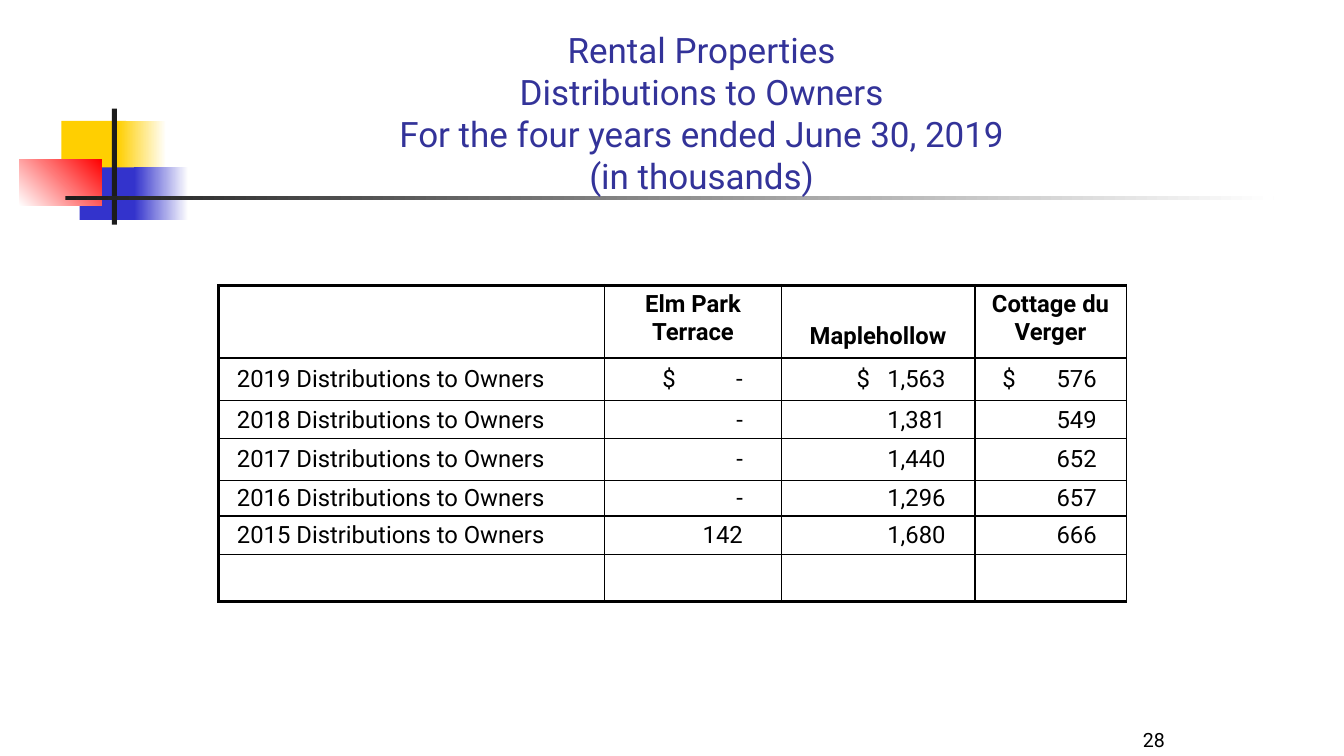
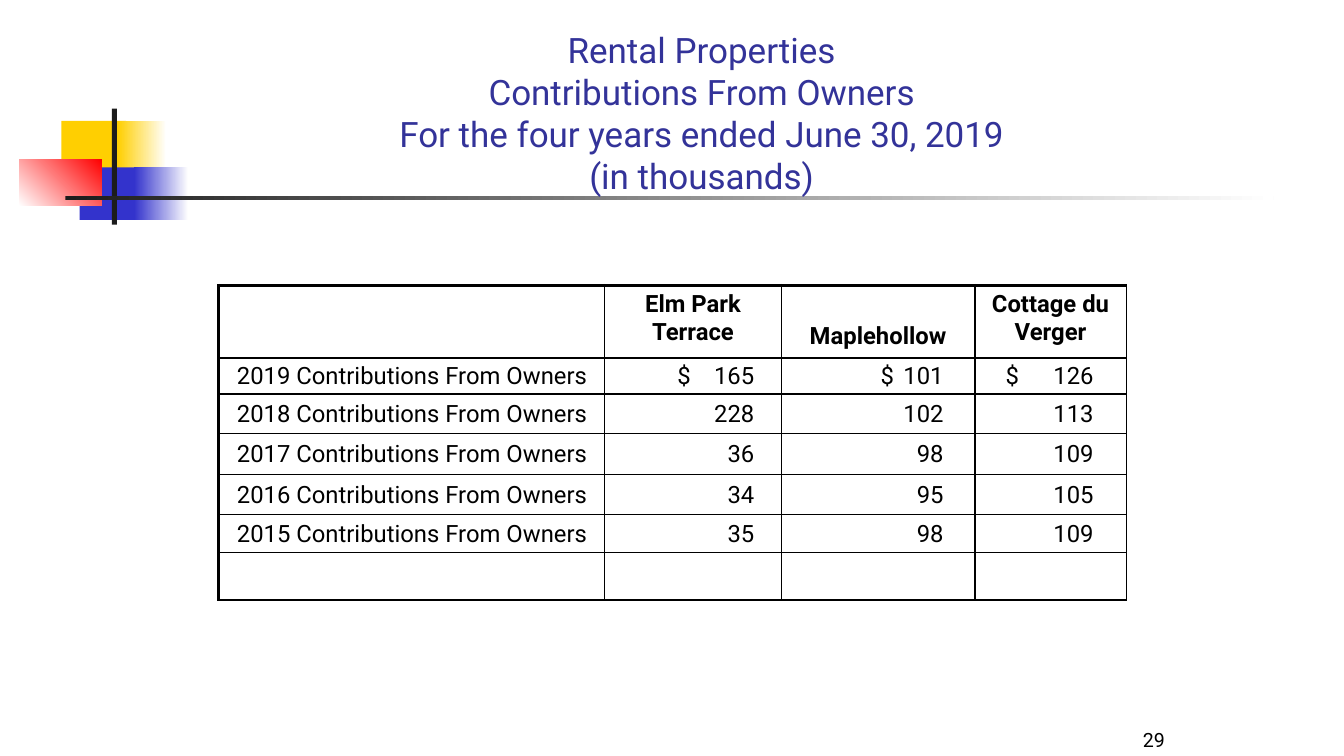
from dataclasses import dataclass

from lxml.etree import SubElement
from pptx import Presentation
from pptx.dml.color import RGBColor
from pptx.enum.shapes import MSO_SHAPE
from pptx.enum.text import MSO_ANCHOR, PP_ALIGN
from pptx.oxml.ns import qn
from pptx.util import Cm, Pt

# Shared style
FONT = "Roboto"
COLORS = {
    "yellow": "FFCF01",
    "blue": "3333CC",
    "red": "FF0000",
    "dark": "1C1C1C",
    "white": "FFFFFF",
    "title": "333399",
    "text": "000000",
}
THIN, THICK = 1, 2.25
COLUMN_WIDTHS = (9.73, 4.45, 4.88, 3.81)
HEADERS = ("", "Elm Park Terrace", "Maplehollow", "Cottage du Verger")


@dataclass(frozen=True)
class Bar:
    left: float
    top: float
    width: float
    height: float
    start: str
    end: str = ""
    angle: float = 0


@dataclass(frozen=True)
class OwnersSlide:
    subject: str
    page: int
    row_heights: tuple[float, ...]
    dollar_offsets: tuple[float, ...]  # from the left edge of each column
    number_insets: tuple[float, ...]  # from the right edge of each column
    values: dict[int, tuple[str, ...]]


BARS = (
    Bar(1.55, 3.05, 1.63, 1.32, "yellow"),
    Bar(2.97, 3.05, 1.22, 1.32, "yellow", "white"),
    Bar(2.01, 4.22, 1.55, 1.32, "blue"),
    Bar(3.38, 4.22, 1.37, 1.32, "blue", "white"),
    Bar(0.48, 4.01, 2.08, 1.17, "white", "red", 45),
    Bar(2.82, 2.74, 0.13, 2.92, "dark"),
    Bar(1.65, 4.95, 30.45, 0.09, "dark", "white"),
)

SLIDES = (
    OwnersSlide(
        "Distributions to Owners", 28,
        (1.83, 1.07, 0.95, 1.06, 0.9, 0.97, 1.18),
        (1.45, 1.9, 0.69), (0.97, 0.74, 0.74),
        {
            2019: ("-", "1,563", "576"),
            2018: ("-", "1,381", "549"),
            2017: ("-", "1,440", "652"),
            2016: ("-", "1,296", "657"),
            2015: ("142", "1,680", "666"),
        },
    ),
    OwnersSlide(
        "Contributions From Owners", 29,
        (1.83, 0.91, 1, 1.03, 1, 0.97, 1.19),
        (1.83, 2.5, 0.77), (0.68, 0.79, 0.82),
        {
            2019: ("165", "101", "126"),
            2018: ("228", "102", "113"),
            2017: ("36", "98", "109"),
            2016: ("34", "95", "105"),
            2015: ("35", "98", "109"),
        },
    ),
)


def rgb(name: str) -> RGBColor:
    return RGBColor.from_string(COLORS[name])


def style_text(tf, size: float, color: str = "text", bold: bool = False,
               align=PP_ALIGN.LEFT) -> None:
    for p in tf.paragraphs:
        p.alignment = align
        for r in p.runs:
            r.font.name = FONT
            r.font.size = Pt(size)
            r.font.bold = bold
            r.font.color.rgb = rgb(color)


def add_bar(s, bar: Bar) -> None:
    sp = s.shapes.add_shape(MSO_SHAPE.RECTANGLE, Cm(bar.left), Cm(bar.top),
                            Cm(bar.width), Cm(bar.height))
    sp.shadow.inherit = False
    sp.line.fill.background()
    if bar.end:
        sp.fill.gradient()
        sp.fill.gradient_angle = bar.angle
        for stop, name in zip(sp.fill.gradient_stops, (bar.start, bar.end)):
            stop.color.rgb = rgb(name)
    else:
        sp.fill.solid()
        sp.fill.fore_color.rgb = rgb(bar.start)


def add_text(s, box: tuple[float, ...], text: str, size: float, color: str, align) -> None:
    tf = s.shapes.add_textbox(*map(Cm, box)).text_frame
    tf.word_wrap = True
    tf.vertical_anchor = MSO_ANCHOR.BOTTOM
    tf.text = text
    style_text(tf, size, color, align=align)


def set_borders(cell, widths: dict[str, float]) -> None:
    tc_pr = cell._tc.get_or_add_tcPr()
    for side in ("L", "R", "T", "B"):
        ln = SubElement(tc_pr, qn(f"a:ln{side}"), w=str(Pt(widths.get(side, THIN))))
        fill = SubElement(ln, qn("a:solidFill"))
        SubElement(fill, qn("a:srgbClr"), val=COLORS["text"])


def fill_header(cell, text: str) -> None:
    cell.text = text
    style_text(cell.text_frame, 17, bold=True, align=PP_ALIGN.CENTER)
    # One-word names sit at the foot of the two-line header
    if " " not in text:
        cell.vertical_anchor = MSO_ANCHOR.BOTTOM
        cell.margin_bottom = Cm(0.18)


def fill_body(cell, text: str, left: float = 0.03, right: float = 0.03,
              align=PP_ALIGN.LEFT) -> None:
    cell.text = text
    cell.vertical_anchor = MSO_ANCHOR.MIDDLE
    cell.margin_left, cell.margin_right = Cm(left), Cm(right)
    cell.margin_top, cell.margin_bottom = Cm(0.03), Cm(0)
    style_text(cell.text_frame, 17, align=align)


def fill_dollars(cell, value: str, offset: float, tab: float) -> None:
    """Put the sign at the offset and end the number at a right tab."""
    fill_body(cell, f"$\t{value}", left=offset)
    p_pr = cell.text_frame.paragraphs[0]._p.get_or_add_pPr()
    tabs = SubElement(p_pr, qn("a:tabLst"))
    SubElement(tabs, qn("a:tab"), pos=str(Cm(tab)), algn="r")


def add_owners_table(s, data: OwnersSlide) -> None:
    heights = data.row_heights
    table = s.shapes.add_table(len(heights), len(COLUMN_WIDTHS), Cm(5.51), Cm(7.19),
                               Cm(sum(COLUMN_WIDTHS)), Cm(sum(heights))).table
    table.first_row = table.horz_banding = False
    for column, width in zip(table.columns, COLUMN_WIDTHS):
        column.width = Cm(width)
    for row, height in zip(table.rows, heights):
        row.height = Cm(height)

    # Grid: heavy left, top and bottom edges
    for i, row in enumerate(table.rows):
        for j, cell in enumerate(row.cells):
            set_borders(cell, {
                "L": THIN if j else THICK,
                "T": THIN if i else THICK,
                "B": THICK if i == len(heights) - 1 else THIN,
            })
            cell.fill.background()

    # Header and yearly amounts
    for j, header in enumerate(HEADERS):
        fill_header(table.cell(0, j), header)
    for i, (year, values) in enumerate(data.values.items(), start=1):
        fill_body(table.cell(i, 0), f"{year} {data.subject}", left=0.46)
        columns = zip(values, COLUMN_WIDTHS[1:], data.dollar_offsets, data.number_insets)
        for j, (value, width, offset, inset) in enumerate(columns, start=1):
            cell = table.cell(i, j)
            if i == 1:
                fill_dollars(cell, value, offset, width - inset - offset)
            else:
                fill_body(cell, value, right=inset, align=PP_ALIGN.RIGHT)


def add_owners_slide(prs, data: OwnersSlide) -> None:
    s = prs.slides.add_slide(prs.slide_layouts[6])
    for bar in BARS:
        add_bar(s, bar)
    title = "\v".join(("Rental Properties", data.subject,
                       "For the four years ended June 30, 2019", "(in thousands)"))
    add_text(s, (6.15, 0.58, 23.06, 4.5), title, 25, "title", PP_ALIGN.CENTER)
    add_owners_table(s, data)
    add_text(s, (24.33, 17.78, 5.28, 1.27), str(data.page), 14, "text", PP_ALIGN.RIGHT)


def main() -> None:
    prs = Presentation()
    prs.slide_width, prs.slide_height = Cm(33.87), Cm(19.05)
    for data in SLIDES:
        add_owners_slide(prs, data)
    prs.save("out.pptx")


if __name__ == "__main__":
    main()
